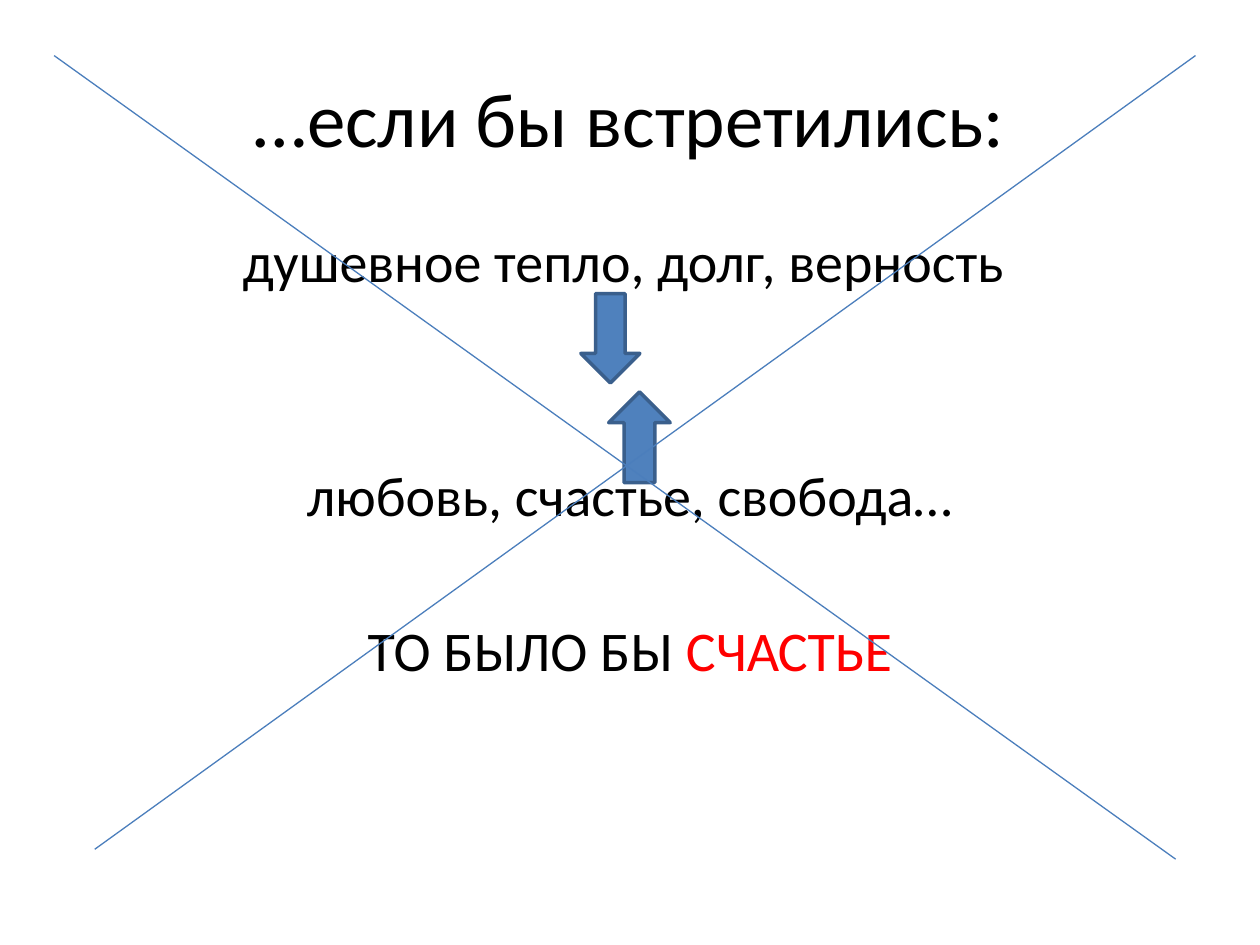
from dataclasses import dataclass

from lxml import etree
from pptx import Presentation
from pptx.dml.color import RGBColor
from pptx.enum.shapes import MSO_CONNECTOR, MSO_SHAPE
from pptx.enum.text import MSO_ANCHOR, PP_ALIGN
from pptx.oxml.ns import qn
from pptx.slide import Slide
from pptx.util import Cm, Pt

CENTER = PP_ALIGN.CENTER
TOP, MIDDLE = MSO_ANCHOR.TOP, MSO_ANCHOR.MIDDLE
DOWN_ARROW = MSO_SHAPE.DOWN_ARROW
STRAIGHT = MSO_CONNECTOR.STRAIGHT

FONT = "Calibri"
COLORS = {
    "text": "000000",
    "accent": "FF0000",
    "arrow": "4F81BD",
    "outline": "3A5F8C",
    "cross": "4B7EBC",
}


@dataclass
class Span:
    text: str
    color: str = "text"


@dataclass
class Para:
    spans: list[Span]
    space_before: float = 0


@dataclass
class TextBlock:
    top: float
    height: float
    size: int
    anchor: MSO_ANCHOR
    paras: list[Para]


@dataclass
class Arrow:
    left: float
    top: float
    width: float
    height: float
    rotation: int = 0


@dataclass
class Line:
    start: tuple[float, float]
    end: tuple[float, float]


BLOCKS = [
    TextBlock(0.76, 3.18, 44, MIDDLE, [Para([Span("…если бы встретились:")])]),
    TextBlock(4.45, 12.57, 32, TOP, [
        Para([Span("душевное тепло, долг, верность ")]),
        Para([Span("любовь, счастье, свобода…")], 95),
        Para([Span("ТО БЫЛО БЫ "), Span("СЧАСТЬЕ", "accent")], 50),
    ]),
]
ARROWS = [
    Arrow(11.71, 5.92, 1.19, 1.8),
    Arrow(12.27, 7.9, 1.24, 1.83, 180),
]
CROSS = [
    Line((1.09, 1.12), (23.7, 17.32)),
    Line((24.1, 1.12), (1.91, 17.12)),
]


def rgb(name: str) -> RGBColor:
    return RGBColor.from_string(COLORS[name])


def draw_text(page: Slide, block: TextBlock) -> None:
    box = page.shapes.add_textbox(Cm(1.27), Cm(block.top), Cm(22.86), Cm(block.height))
    frame = box.text_frame
    frame.word_wrap = True
    frame.vertical_anchor = block.anchor
    for index, item in enumerate(block.paras):
        para = frame.add_paragraph() if index else frame.paragraphs[0]
        para.alignment = CENTER
        para.space_before = Pt(item.space_before)
        for span in item.spans:
            run = para.add_run()
            run.text = span.text
            run.font.name = FONT
            run.font.size = Pt(block.size)
            run.font.color.rgb = rgb(span.color)


def draw_arrow(page: Slide, arrow: Arrow) -> None:
    shape = page.shapes.add_shape(
        DOWN_ARROW, Cm(arrow.left), Cm(arrow.top), Cm(arrow.width), Cm(arrow.height)
    )
    shape.rotation = arrow.rotation
    shape.shadow.inherit = False
    shape.fill.solid()
    shape.fill.fore_color.rgb = rgb("arrow")
    shape.line.color.rgb = rgb("outline")
    shape.line.width = Pt(2)


def draw_line(page: Slide, line: Line) -> None:
    ends = [Cm(value) for value in (*line.start, *line.end)]
    connector = page.shapes.add_connector(STRAIGHT, *ends)
    connector.line.color.rgb = rgb("cross")
    connector.line.width = Pt(0.75)
    # An empty effect list switches the theme shadow off
    etree.SubElement(connector._element.spPr, qn("a:effectLst"))


def main() -> None:
    deck = Presentation()
    deck.slide_width, deck.slide_height = Cm(25.4), Cm(19.05)
    page = deck.slides.add_slide(deck.slide_layouts[6])

    # Title and statements
    for block in BLOCKS:
        draw_text(page, block)
    # Arrows that meet between the statements
    for arrow in ARROWS:
        draw_arrow(page, arrow)
    # Cross over the whole page
    for line in CROSS:
        draw_line(page, line)

    deck.save("out.pptx")


if __name__ == "__main__":
    main()
